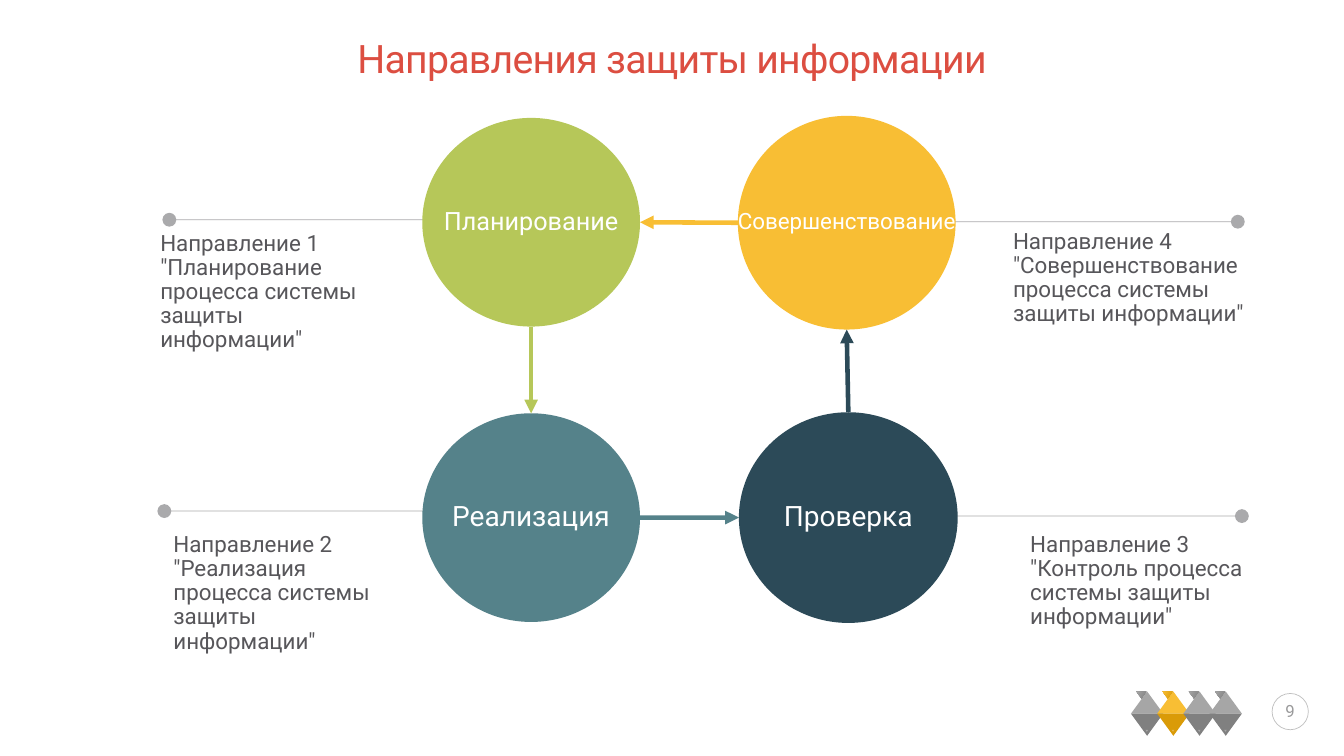
import lxml.etree
import pptx
import pptx.dml.color
import pptx.enum.shapes
import pptx.enum.text
import pptx.oxml.ns
import pptx.util

WIDE = pptx.util.Inches(13.33)
HIGH = pptx.util.Inches(7.5)
FORM = pptx.enum.shapes.MSO_SHAPE
ALIGN = pptx.enum.text.PP_ALIGN
MID = pptx.enum.text.MSO_ANCHOR.MIDDLE
GREY = "57565A"
WHITE = "FFFFFF"


def across(share):
    return round(WIDE * share / 100)


def down(share):
    return round(HIGH * share / 100)


def area(left, top, width, height):
    return across(left), down(top), across(width), down(height)


def tint(color, code):
    color.rgb = pptx.dml.color.RGBColor.from_string(code)


def node(parent, tag, **attrs):
    return lxml.etree.SubElement(parent, pptx.oxml.ns.qn(tag), attrs)


def fade(shape, share):
    for color in shape.element.spPr.iter(pptx.oxml.ns.qn("a:srgbClr")):
        node(color, "a:alpha", val=str(share * 1000))


def stroke(line, code, width):
    line.width = pptx.util.Pt(width)
    line.fill.solid()
    tint(line.fill.fore_color, code)


def tail(shape, kind, size):
    line = shape.element.spPr.find(pptx.oxml.ns.qn("a:ln"))
    node(line, "a:tailEnd", type=kind, w=size, len=size)


def write(frame, text, size, code, align, pitch=0.9, wrap=True, inset=(0, 0)):
    side, edge = (pptx.util.Inches(gap) for gap in inset)
    frame.margin_left = frame.margin_right = side
    frame.margin_top = frame.margin_bottom = edge
    frame.word_wrap = wrap
    para = frame.paragraphs[0]
    para.alignment = align
    para.line_spacing = pitch
    run = para.add_run()
    run.text = text
    run.font.name = "Roboto"
    run.font.size = pptx.util.Pt(size)
    tint(run.font.color, code)


def solid(slide, form, box, code, turn=0):
    shape = slide.shapes.add_shape(form, *area(*box))
    shape.shadow.inherit = False
    shape.rotation = turn
    shape.fill.solid()
    tint(shape.fill.fore_color, code)
    shape.line.fill.background()
    return shape


def disc(slide, box, code, text, size, ink=WHITE):
    shape = solid(slide, FORM.OVAL, box, code)
    shape.text_frame.vertical_anchor = MID
    write(shape.text_frame, text, size, ink, ALIGN.CENTER, wrap=False)
    return shape


def head(slide, text):
    title = slide.shapes.title
    title.left, title.top, title.width, title.height = area(7.5, 2.13, 85, 11.87)
    title.text_frame.vertical_anchor = MID
    write(title.text_frame, text, 28, "DC4E41", ALIGN.CENTER, 0.86)
    for style in title.element.iter(pptx.oxml.ns.qn("a:rPr")):
        style.set("spc", "-50")


def lead(slide, start, bend, end):
    pen = slide.shapes.build_freeform(across(start[0]), down(start[1]))
    level = down(bend[1])
    pen.add_line_segments([(across(bend[0]), level), (across(end), level)], close=False)
    shape = pen.convert_to_shape()
    shape.shadow.inherit = False
    shape.fill.background()
    stroke(shape.line, GREY, 0.5)
    fade(shape, 50)
    tail(shape, "oval", "lg")


def note(slide, left, top, width, text):
    box = slide.shapes.add_textbox(*area(left, top, width, 14.27))
    write(box.text_frame, text, 16, GREY, ALIGN.LEFT, inset=(0.13, 0.05))
    box.text_frame.auto_size = pptx.enum.text.MSO_AUTO_SIZE.SHAPE_TO_FIT_TEXT


def spot(shape, side):
    sides = {"left": (0, 0.5), "right": (1, 0.5), "top": (0.5, 0), "base": (0.5, 1)}
    col, row = sides[side]
    return round(shape.left + shape.width * col), round(shape.top + shape.height * row)


def arrow(slide, first, out, last, into, code):
    kind = pptx.enum.shapes.MSO_CONNECTOR.STRAIGHT
    link = slide.shapes.add_connector(kind, *spot(first, out), *spot(last, into))
    stroke(link.line, code, 3.25)
    tail(link, "triangle", "med")
    node(link.element.spPr, "a:effectLst")


def gem(slide, left, light, dark):
    peak = FORM.ISOSCELES_TRIANGLE
    solid(slide, peak, (left, 91.47, 2.4, 2.93), light)
    notch = solid(slide, peak, (left + 0.41, 91.47, 0.75, 0.93), light, 180)
    notch.fill.gradient()
    notch.fill.gradient_angle = 330
    for stop, code in zip(notch.fill.gradient_stops, (dark, light)):
        tint(stop.color, code)
    solid(slide, peak, (left, 94.4, 2.4, 2.93), dark, 180)
    fade(solid(slide, peak, (left + 1.08, 96.53, 0.2, 0.27), WHITE, 180), 30)


def main():
    deck = pptx.Presentation()
    deck.slide_width, deck.slide_height = WIDE, HIGH
    slide = deck.slides.add_slide(deck.slide_layouts[5])
    head(slide, "Направления защиты информации")

    for start, bend, end in (
        ((64.8, 33.73), (70.28, 29.33), 92.1),
        ((65.1, 63.87), (70.58, 68.27), 92.4),
        ((38.63, 33.47), (33.38, 29.07), 12.6),
        ((38.25, 63.07), (33, 67.6), 12.23),
    ):
        lead(slide, start, bend, end)

    lime, gold, teal, navy = "B6C759", "F8BE34", "55828A", "2C4A58"
    plan = disc(slide, (31.42, 15.6, 16.2, 27.6), lime, "Планирование", 18)
    grow = disc(slide, (54.9, 15.33, 16.2, 28.27), gold, "Совершенствование", 16)
    work = disc(slide, (31.42, 54.67, 16.2, 27.6), teal, "Реализация", 20)
    check = disc(slide, (54.98, 54.53, 16.28, 27.87), navy, "Проверка", 20)

    for left, top, width, text in (
        (74.4, 29.73, 20.63, 'Направление 4 "Совершенствование процесса системы защиты информации"'),
        (75.68, 69.87, 20.63, 'Направление 3 "Контроль процесса системы защиты информации"'),
        (10.95, 30, 18.68, 'Направление 1 "Планирование процесса системы защиты информации"'),
        (11.93, 69.87, 18.68, 'Направление 2 "Реализация процесса системы защиты информации"'),
    ):
        note(slide, left, top, width, text)

    arrow(slide, plan, "base", work, "top", lime)
    arrow(slide, work, "right", check, "left", teal)
    arrow(slide, check, "top", grow, "base", navy)
    arrow(slide, grow, "left", plan, "right", gold)

    for place in range(4):
        light, dark = (gold, "DA9B08") if place == 1 else ("A6A6A6", "808080")
        gem(slide, 84.15 + 1.95 * place, light, dark)

    page = disc(slide, (94.65, 91.73, 2.7, 4.8), WHITE, "9", 12, "9A9A9B")
    stroke(page.line, "BFBFBF", 0.5)
    deck.save("out.pptx")


if __name__ == "__main__":
    main()
